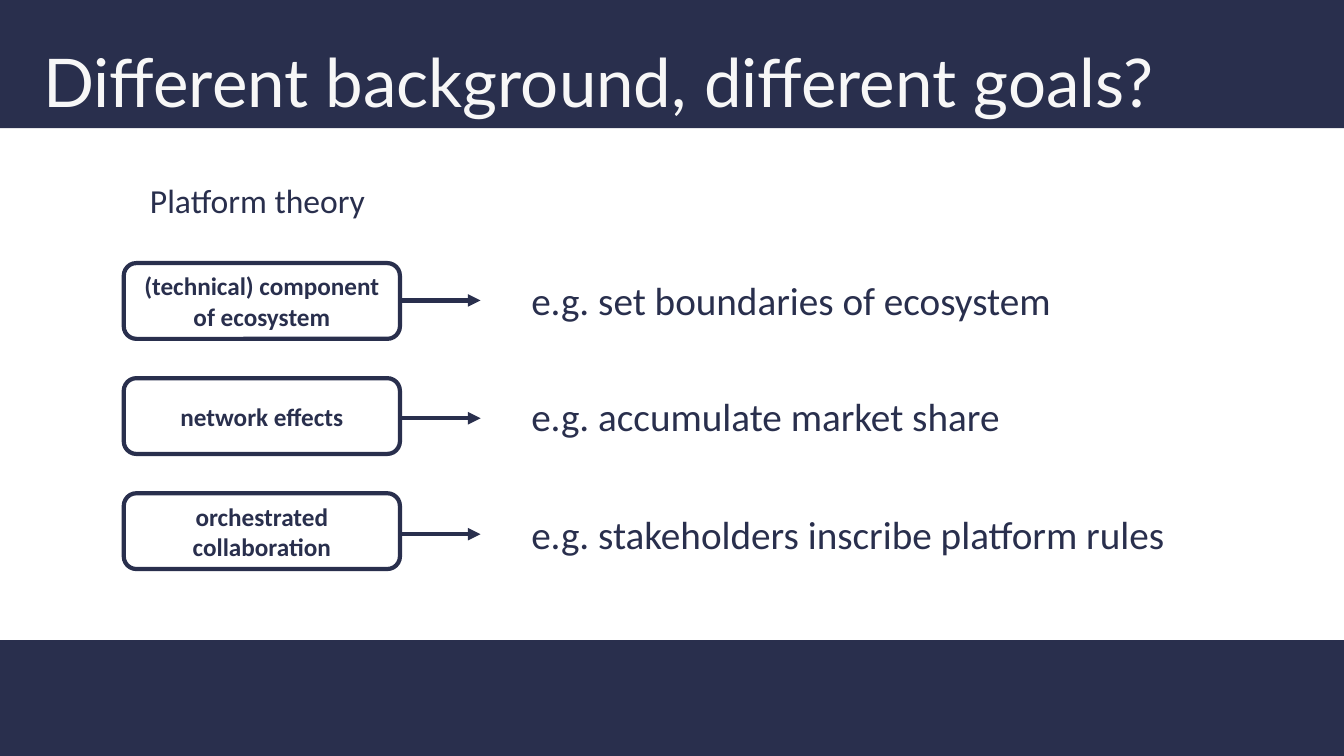
from dataclasses import dataclass

import lxml.etree
import pptx
import pptx.dml.color
import pptx.enum.shapes
import pptx.enum.text
import pptx.oxml.ns
import pptx.presentation
import pptx.slide
import pptx.text.text
import pptx.util
from pptx.util import Cm

NAVY = pptx.dml.color.RGBColor(0x29, 0x2F, 0x4D)
OFF_WHITE = pptx.dml.color.RGBColor(0xF7, 0xF7, 0xF7)
WHITE = pptx.dml.color.RGBColor(0xFF, 0xFF, 0xFF)

SLIDE_WIDTH, SLIDE_HEIGHT = 33.87, 19.05
BOX_LEFT, BOX_WIDTH, BOX_HEIGHT = 3.12, 6.96, 1.91
FIRST_BOX_TOP, BOX_PITCH = 6.63, 2.9
ARROW_LENGTH = 2.03
GOAL_LEFT, GOAL_HEIGHT = 13.14, 1.45


@dataclass(frozen=True)
class Goal:
    concept: str
    example: str
    arrow_y: float
    text_top: float
    text_width: float


GOALS = [
    Goal("(technical) component of ecosystem", "e.g. set boundaries of ecosystem", 7.57, 6.83, 13.97),
    Goal("network effects", "e.g. accumulate market share", 10.54, 9.75, 12.65),
    Goal("orchestrated collaboration", "e.g. stakeholders inscribe platform rules", 13.46, 12.73, 17.2),
]


def add_run(
    paragraph: pptx.text.text._Paragraph,
    text: str,
    size: float,
    color: pptx.dml.color.RGBColor = NAVY,
    font_name: str = "Calibri",
    bold: bool = False,
) -> None:
    run = paragraph.add_run()
    run.text = text
    run.font.name = font_name
    run.font.size = pptx.util.Pt(size)
    run.font.bold = bold
    run.font.color.rgb = color


def add_band(slide: pptx.slide.Slide, top: float, height: float) -> None:
    band = slide.shapes.add_shape(
        pptx.enum.shapes.MSO_SHAPE.RECTANGLE, Cm(0), Cm(top), Cm(SLIDE_WIDTH), Cm(height)
    )
    band.shadow.inherit = False
    band.fill.solid()
    band.fill.fore_color.rgb = NAVY
    band.line.fill.background()


def add_title(slide: pptx.slide.Slide, text: str) -> None:
    title = slide.shapes.title
    title.left, title.top, title.width, title.height = Cm(0.84), Cm(0.48), Cm(30.71), Cm(2.72)
    frame = title.text_frame
    frame.auto_size = pptx.enum.text.MSO_AUTO_SIZE.NONE
    frame.vertical_anchor = pptx.enum.text.MSO_ANCHOR.BOTTOM
    paragraph = frame.paragraphs[0]
    paragraph.alignment = pptx.enum.text.PP_ALIGN.LEFT
    paragraph.line_spacing = 0.9
    add_run(paragraph, text, 48, OFF_WHITE, "Lato")
    # Bring the title in front of the bands
    title.element.getparent().append(title.element)


def add_label(
    slide: pptx.slide.Slide, text: str, left: float, top: float, width: float, height: float, size: float
) -> None:
    label = slide.shapes.add_textbox(Cm(left), Cm(top), Cm(width), Cm(height))
    label.text_frame.word_wrap = False
    label.text_frame.auto_size = pptx.enum.text.MSO_AUTO_SIZE.SHAPE_TO_FIT_TEXT
    add_run(label.text_frame.paragraphs[0], text, size)


def add_concept_box(slide: pptx.slide.Slide, text: str, top: float) -> None:
    box = slide.shapes.add_shape(
        pptx.enum.shapes.MSO_SHAPE.ROUNDED_RECTANGLE,
        Cm(BOX_LEFT), Cm(top), Cm(BOX_WIDTH), Cm(BOX_HEIGHT),
    )
    box.shadow.inherit = False
    box.fill.background()
    box.line.color.rgb = NAVY
    box.line.width = pptx.util.Pt(3)
    frame = box.text_frame
    frame.word_wrap = True
    frame.vertical_anchor = pptx.enum.text.MSO_ANCHOR.MIDDLE
    paragraph = frame.paragraphs[0]
    paragraph.alignment = pptx.enum.text.PP_ALIGN.CENTER
    add_run(paragraph, text, 18, bold=True)


def add_arrow(slide: pptx.slide.Slide, y: float) -> None:
    start = BOX_LEFT + BOX_WIDTH
    arrow = slide.shapes.add_connector(
        pptx.enum.shapes.MSO_CONNECTOR.STRAIGHT, Cm(start), Cm(y), Cm(start + ARROW_LENGTH), Cm(y)
    )
    arrow.line.color.rgb = NAVY
    arrow.line.width = pptx.util.Pt(3)
    # Arrowhead at the end, and no shadow
    qn = pptx.oxml.ns.qn
    properties = arrow.element.find(qn("p:spPr"))
    lxml.etree.SubElement(properties.find(qn("a:ln")), qn("a:tailEnd"), type="triangle")
    lxml.etree.SubElement(properties, qn("a:effectLst"))


def build_presentation() -> pptx.presentation.Presentation:
    presentation = pptx.Presentation()
    presentation.slide_width = Cm(SLIDE_WIDTH)
    presentation.slide_height = Cm(SLIDE_HEIGHT)
    slide = presentation.slides.add_slide(presentation.slide_layouts.get_by_name("Title Only"))
    slide.background.fill.solid()
    slide.background.fill.fore_color.rgb = WHITE

    # Bands and title
    add_band(slide, 16.13, SLIDE_HEIGHT - 16.13)
    add_band(slide, 0, 3.23)
    add_title(slide, "Different background, different goals?")

    # Concepts, each leading to an example goal
    add_label(slide, "Platform theory", 3.53, 4.42, 6.15, 1.27, 24)
    for index, goal in enumerate(GOALS):
        add_concept_box(slide, goal.concept, FIRST_BOX_TOP + index * BOX_PITCH)
        add_arrow(slide, goal.arrow_y)
        add_label(slide, goal.example, GOAL_LEFT, goal.text_top, goal.text_width, GOAL_HEIGHT, 28)
    return presentation


if __name__ == "__main__":
    build_presentation().save("out.pptx")
